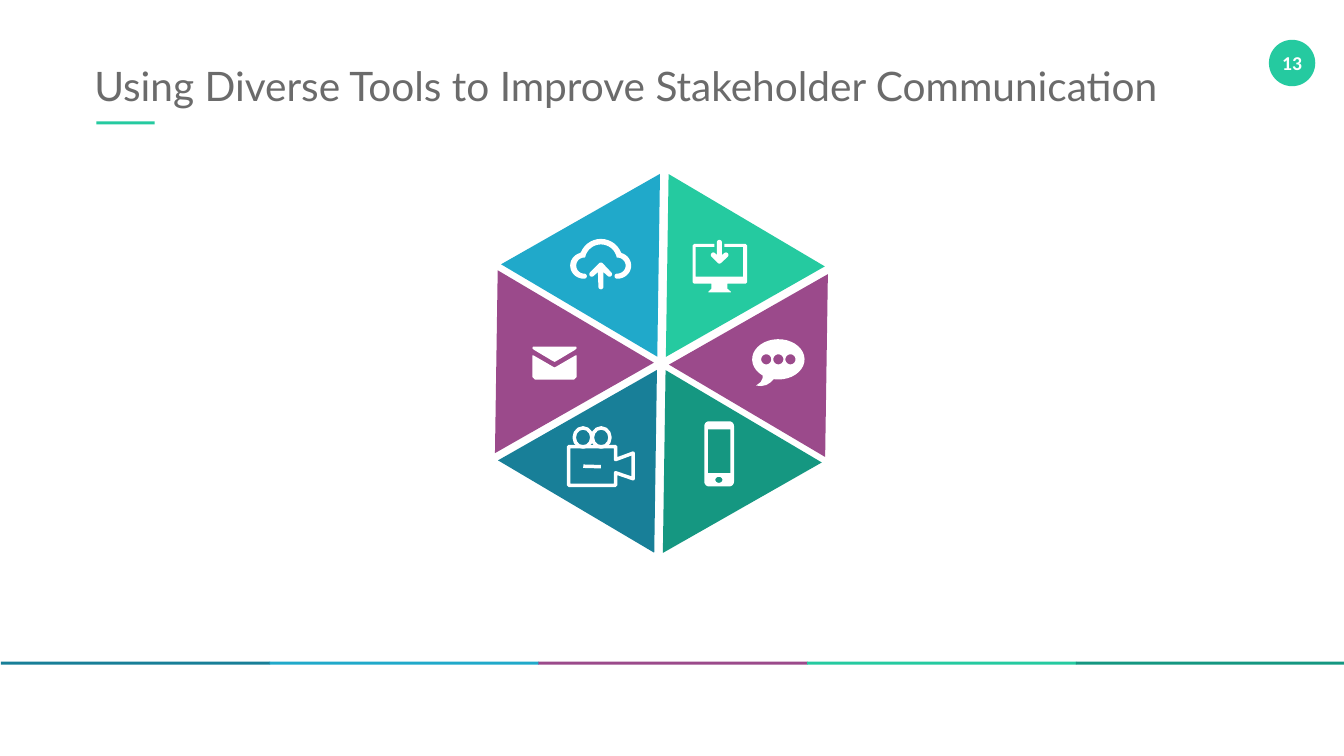
import math

from lxml import etree
from pptx import Presentation
from pptx.dml.color import RGBColor
from pptx.enum import shapes, text
from pptx.oxml import ns
from pptx.util import Inches, Pt

GREEN = RGBColor(0x25, 0xCA, 0xA0)
DARK_GREEN = RGBColor(0x15, 0x97, 0x81)
BLUE = RGBColor(0x20, 0xA9, 0xCA)
DARK_BLUE = RGBColor(0x18, 0x7F, 0x98)
PURPLE = RGBColor(0x9B, 0x4A, 0x8B)
GREY = RGBColor(0x6B, 0x6B, 0x6B)
WHITE = RGBColor(0xFF, 0xFF, 0xFF)
SHAPE = shapes.MSO_SHAPE

prs = Presentation()
prs.slide_width, prs.slide_height = Inches(26.66), Inches(15)
slide = prs.slides.add_slide(prs.slide_layouts.get_by_name("Title Only"))


def arc(cx, cy, rx, ry, start=0, end=360):
    """Points along an ellipse; degrees run clockwise from the right."""
    steps = max(8, round(abs(end - start) / 10))
    angles = [math.radians(start + (end - start) * i / steps) for i in range(steps + 1)]
    return [(cx + rx * math.cos(a), cy + ry * math.sin(a)) for a in angles]


def add_filled(color, box=None, preset=None, contours=None):
    """Add a borderless preset in a box, or one outline made of closed contours."""
    if preset is not None:
        shape = slide.shapes.add_shape(preset, *map(Inches, box))
    else:
        outlines = [[(Inches(x), Inches(y)) for x, y in points] for points in contours]
        builder = slide.shapes.build_freeform(*outlines[0][0])
        builder.add_line_segments(outlines[0][1:], close=True)
        for outline in outlines[1:]:
            builder.move_to(*outline[0])
            builder.add_line_segments(outline[1:], close=True)
        shape = builder.convert_to_shape()
    shape.shadow.inherit = False
    shape.fill.solid()
    shape.fill.fore_color.rgb = color
    shape.line.fill.background()
    return shape


# Page number badge
badge = add_filled(GREEN, (25.17, 0.79, 0.92, 0.92), SHAPE.OVAL)
number = badge.text_frame
number.margin_left = number.margin_right = number.margin_top = number.margin_bottom = 0
number.word_wrap = False
number.vertical_anchor = text.MSO_ANCHOR.MIDDLE
number.text = "13"
number_line = number.paragraphs[0]
number_line.alignment = text.PP_ALIGN.CENTER
number_line.font.name, number_line.font.size = "Calibri", Pt(28)
number_line.font.bold = True
number_line.font.color.rgb = WHITE

# Title with its accent rule
title = slide.shapes.title
title.left, title.top, title.width, title.height = map(Inches, (1.87, 1.21, 21.48, 0.98))
heading = title.text_frame
heading.text = "Using Diverse Tools to Improve Stakeholder Communication"
heading.margin_left = heading.margin_right = heading.margin_top = heading.margin_bottom = 0
heading.word_wrap = True
heading.auto_size = text.MSO_AUTO_SIZE.NONE
heading.vertical_anchor = text.MSO_ANCHOR.MIDDLE
heading_line = heading.paragraphs[0]
heading_line.alignment = text.PP_ALIGN.LEFT
heading_line.font.name, heading_line.font.size = "Lato", Pt(58)
heading_line.font.color.rgb = GREY
add_filled(GREEN, (1.91, 2.41, 1.16, 0.06), SHAPE.RECTANGLE)

# Colour band along the bottom
for i, color in enumerate((DARK_BLUE, BLUE, PURPLE, GREEN, DARK_GREEN)):
    add_filled(color, (0.02 + 5.33 * i, 13.13, 5.34, 0.06), SHAPE.RECTANGLE)

# Six triangles that form the hexagon
EXTRACT, MERGE = SHAPE.FLOWCHART_EXTRACT, SHAPE.FLOWCHART_MERGE
for left, top, preset, rotation, color in (
    (12.21, 4.15, EXTRACT, 210.6, GREEN),
    (13.82, 5.22, MERGE, 210.6, PURPLE),
    (12.15, 8.04, EXTRACT, 210.6, DARK_GREEN),
    (10.43, 7.12, EXTRACT, 30.6, DARK_BLUE),
    (8.82, 6.06, MERGE, 30.6, PURPLE),
    (10.49, 3.23, EXTRACT, 30.6, BLUE),
):
    add_filled(color, (left, top, 3.6, 3.15), preset).rotation = rotation

# Solid icons
cloud = (
    arc(11.58, 5.27, 0.27, 0.26, 90, 253)
    + arc(11.92, 5.17, 0.43, 0.43, 202, 338)
    + arc(12.25, 5.27, 0.27, 0.26, -73, 90)
    + arc(12.24, 5.48, 0.05, 0.05, 90, 270)
    + arc(12.24, 5.27, 0.17, 0.16, 90, -90)
    + arc(11.92, 5.17, 0.32, 0.32, -11, -169)
    + arc(11.59, 5.27, 0.16, 0.16, 270, 90)
    + arc(11.59, 5.48, 0.05, 0.05, -90, 90)
)
upload_arrow = (
    arc(11.92, 5.26, 0.05, 0.05, 225, 315)
    + arc(12.09, 5.44, 0.05, 0.05, -45, 135)
    + [(11.97, 5.4)]
    + arc(11.92, 5.69, 0.05, 0.05, 0, 180)
    + [(11.86, 5.4)]
    + arc(11.74, 5.44, 0.05, 0.05, 45, 225)
)
monitor = [
    (13.77, 4.84), (14.17, 4.84), (14.17, 4.9), (13.8, 4.9), (13.8, 5.49),
    (14.74, 5.49), (14.74, 4.9), (14.37, 4.9), (14.37, 4.84), (14.79, 4.84),
    (14.82, 4.87), (14.82, 5.6), (14.79, 5.63), (14.43, 5.63), (14.43, 5.73),
    (14.5, 5.79), (14.5, 5.8), (14.05, 5.8), (14.05, 5.79), (14.11, 5.73),
    (14.11, 5.63), (13.77, 5.63), (13.74, 5.6), (13.74, 4.87),
]
download_arrow = (
    arc(14.27, 4.81, 0.05, 0.05, 180, 360)
    + [(14.32, 5.06)]
    + arc(14.4, 5.06, 0.05, 0.05, 225, 405)
    + arc(14.27, 5.18, 0.05, 0.05, 45, 135)
    + arc(14.15, 5.06, 0.05, 0.05, 135, 315)
    + [(14.22, 5.06)]
)
bubble = arc(15.44, 7.13, 0.52, 0.4, 127, 460) + [
    (15.28, 7.59), (15.2, 7.64), (15.1, 7.66), (15, 7.65), (15.09, 7.58), (15.13, 7.5),
]
bubble_dots = [arc(x, 7.13, 0.1, 0.1) for x in (15.2, 15.44, 15.68)]
phone_body = (
    arc(14.06, 8.46, 0.09, 0.1, 180, 270)
    + arc(14.47, 8.46, 0.09, 0.1, 270, 360)
    + arc(14.47, 9.55, 0.09, 0.1, 0, 90)
    + arc(14.06, 9.55, 0.09, 0.1, 90, 180)
)
phone_screen = [(14.04, 8.52), (14.49, 8.52), (14.49, 9.39), (14.04, 9.39)]
phone_button = arc(14.26, 9.52, 0.07, 0.06)
envelope_flap = [
    (10.57, 6.88), (11.43, 6.88), (11.44, 6.91), (11.41, 6.94), (11.04, 7.16),
    (11, 7.18), (10.96, 7.16), (10.59, 6.94), (10.56, 6.91),
]
envelope_body = [
    (10.56, 7.05), (10.58, 7.05), (10.96, 7.27), (11, 7.29), (11.04, 7.27), (11.42, 7.05),
    (11.44, 7.05), (11.44, 7.48), (11.39, 7.53), (10.61, 7.53), (10.56, 7.48),
]
for icon in (
    [cloud, upload_arrow],
    [monitor, download_arrow],
    [bubble, *bubble_dots],
    [phone_body, phone_screen, phone_button],
    [envelope_flap, envelope_body],
):
    add_filled(WHITE, contours=icon)

# Film camera drawn in lines
camera_body = [
    (12.21, 9.12), (12.21, 8.86), (11.28, 8.86), (11.28, 9.63),
    (12.21, 9.63), (12.21, 9.38), (12.56, 9.5), (12.56, 8.99),
]
camera = [add_filled(WHITE, contours=[camera_body])]
for reel_left in (11.39, 11.75):
    camera.append(add_filled(WHITE, (reel_left, 8.49, 0.35, 0.38), SHAPE.OVAL))
for part in camera:
    part.fill.background()
label = slide.shapes.add_connector(
    shapes.MSO_CONNECTOR.STRAIGHT, *map(Inches, (11.57, 9.25, 11.92, 9.26))
)
for part in (*camera, label):
    part.line.color.rgb = WHITE
    part.line.width = Pt(5)
etree.SubElement(label.element.spPr, ns.qn("a:effectLst"))

prs.save("out.pptx")
